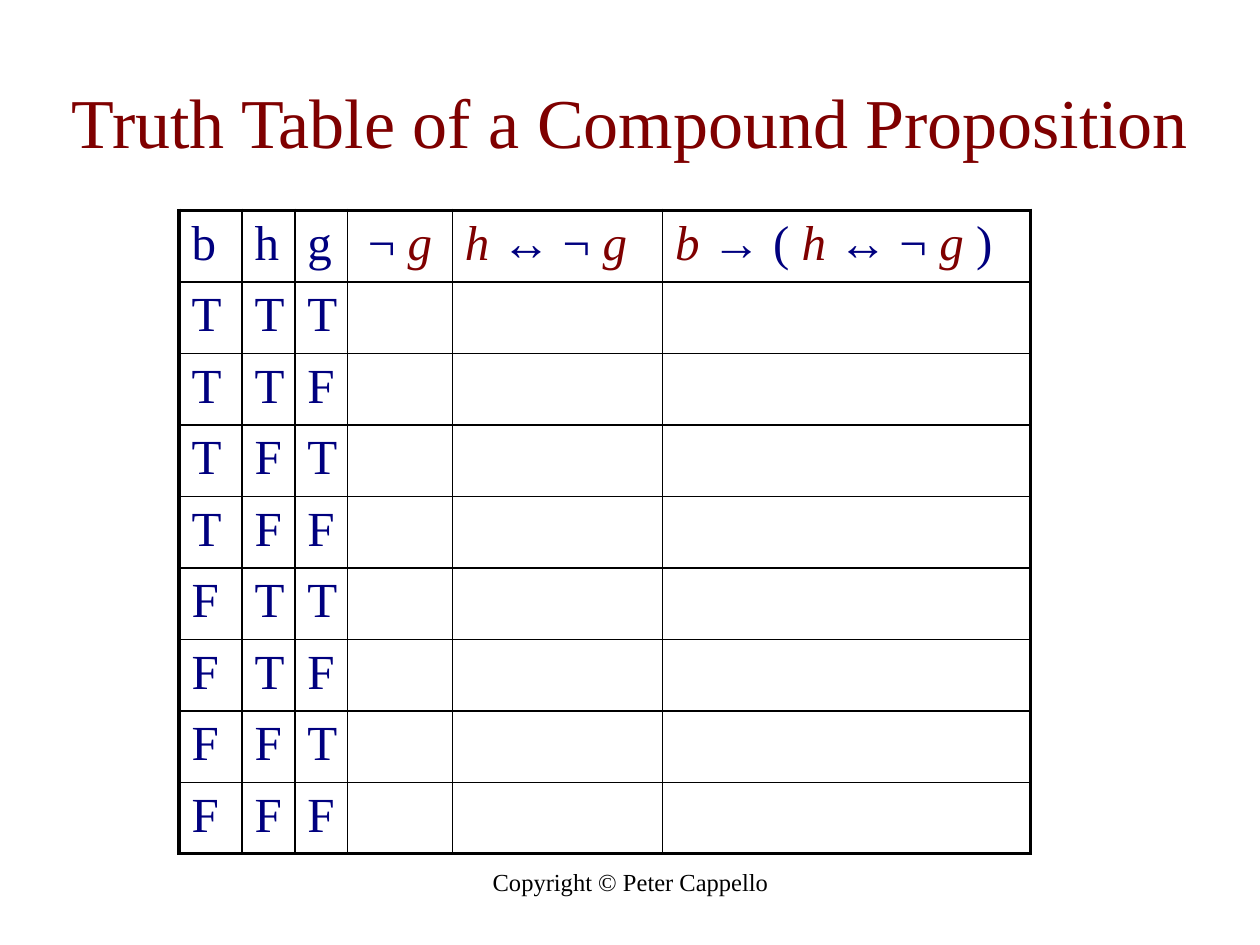
from dataclasses import dataclass
from itertools import product

from lxml import etree
from pptx import Presentation
from pptx import util as u
from pptx.dml.color import RGBColor
from pptx.enum import text
from pptx.oxml import ns

TITLE = "Truth Table of a Compound Proposition"
FOOTER = "Copyright © Peter Cappello"
# Each heading is a list of (text, is_variable) runs.
HEADINGS = [
    [("b", False)],
    [("h", False)],
    [("g", False)],
    [("¬ ", False), ("g", True)],
    [("h", True), (" ↔ ¬ ", False), ("g", True)],
    [("b", True), (" → ( ", False), ("h", True), (" ↔ ¬ ", False),
     ("g ", True), (")", False)],
]
CENTERED_COL = 3
TRUTH_ROWS = list(product("TF", repeat=3))
COL_WIDTHS = [0.5, 0.42, 0.42, 0.83, 1.67, 2.92]
TABLE_LEFT, TABLE_TOP, TABLE_HEIGHT = 1.42, 1.67, 5.1


@dataclass(frozen=True)
class Theme:
    font: str = "Times New Roman"
    maroon: str = "7F0000"
    navy: str = "00007F"
    black: str = "000000"
    title_size: int = 40
    cell_size: int = 28
    footer_size: int = 14
    outer_line: float = 2.25
    inner_line: float = 1


THEME = Theme()


def add_run(p, words, size, color, italic=False):
    r = p.add_run()
    r.text = words
    r.font.name = THEME.font
    r.font.size = u.Pt(size)
    r.font.italic = italic
    r.font.color.rgb = RGBColor.from_string(color)


def add_label(s, box, words, size, color, anchor):
    tf = s.shapes.add_textbox(*map(u.Inches, box)).text_frame
    tf.word_wrap = True
    tf.vertical_anchor = anchor
    p = tf.paragraphs[0]
    p.alignment = text.PP_ALIGN.CENTER
    add_run(p, words, size, color)


def set_borders(cell, widths):
    """Draw the cell's borders; widths maps L, R, T and B to points."""
    tc_pr = cell._tc.get_or_add_tcPr()
    for i, (side, width) in enumerate(widths.items()):
        ln = etree.Element(ns.qn(f"a:ln{side}"), w=str(u.Pt(width)))
        fill = etree.SubElement(ln, ns.qn("a:solidFill"))
        etree.SubElement(fill, ns.qn("a:srgbClr"), val=THEME.black)
        tc_pr.insert(i, ln)


def add_truth_table(s):
    rows = [HEADINGS] + [[[(v, False)] for v in row] for row in TRUTH_ROWS]
    n_rows, n_cols = len(rows), len(COL_WIDTHS)
    frame = s.shapes.add_table(
        n_rows, n_cols, u.Inches(TABLE_LEFT), u.Inches(TABLE_TOP),
        u.Inches(sum(COL_WIDTHS)), u.Inches(TABLE_HEIGHT))
    table = frame.table
    table.first_row = table.horz_banding = False
    for col, width in zip(table.columns, COL_WIDTHS):
        col.width = u.Inches(width)
    for row in table.rows:
        row.height = u.Inches(TABLE_HEIGHT / n_rows)

    for i, j in product(range(n_rows), range(n_cols)):
        cell = table.cell(i, j)
        cell.fill.background()
        on_edge = {"L": j == 0, "R": j == n_cols - 1,
                   "T": i == 0, "B": i == n_rows - 1}
        set_borders(cell, {side: THEME.outer_line if edge else THEME.inner_line
                           for side, edge in on_edge.items()})
        if j >= len(rows[i]):
            continue
        p = cell.text_frame.paragraphs[0]
        if j == CENTERED_COL:
            p.alignment = text.PP_ALIGN.CENTER
        for words, is_variable in rows[i][j]:
            add_run(p, words, THEME.cell_size,
                    THEME.maroon if is_variable else THEME.navy, is_variable)


def main():
    prs = Presentation()
    prs.slide_width, prs.slide_height = u.Inches(10), u.Inches(7.5)
    s = prs.slides.add_slide(prs.slide_layouts[6])
    add_label(s, (3.42, 6.83, 3.17, 0.5), FOOTER, THEME.footer_size,
              THEME.black, text.MSO_ANCHOR.TOP)
    add_label(s, (0.25, 0.33, 9.5, 1.25), TITLE, THEME.title_size,
              THEME.maroon, text.MSO_ANCHOR.MIDDLE)
    add_truth_table(s)
    prs.save("out.pptx")


if __name__ == "__main__":
    main()
